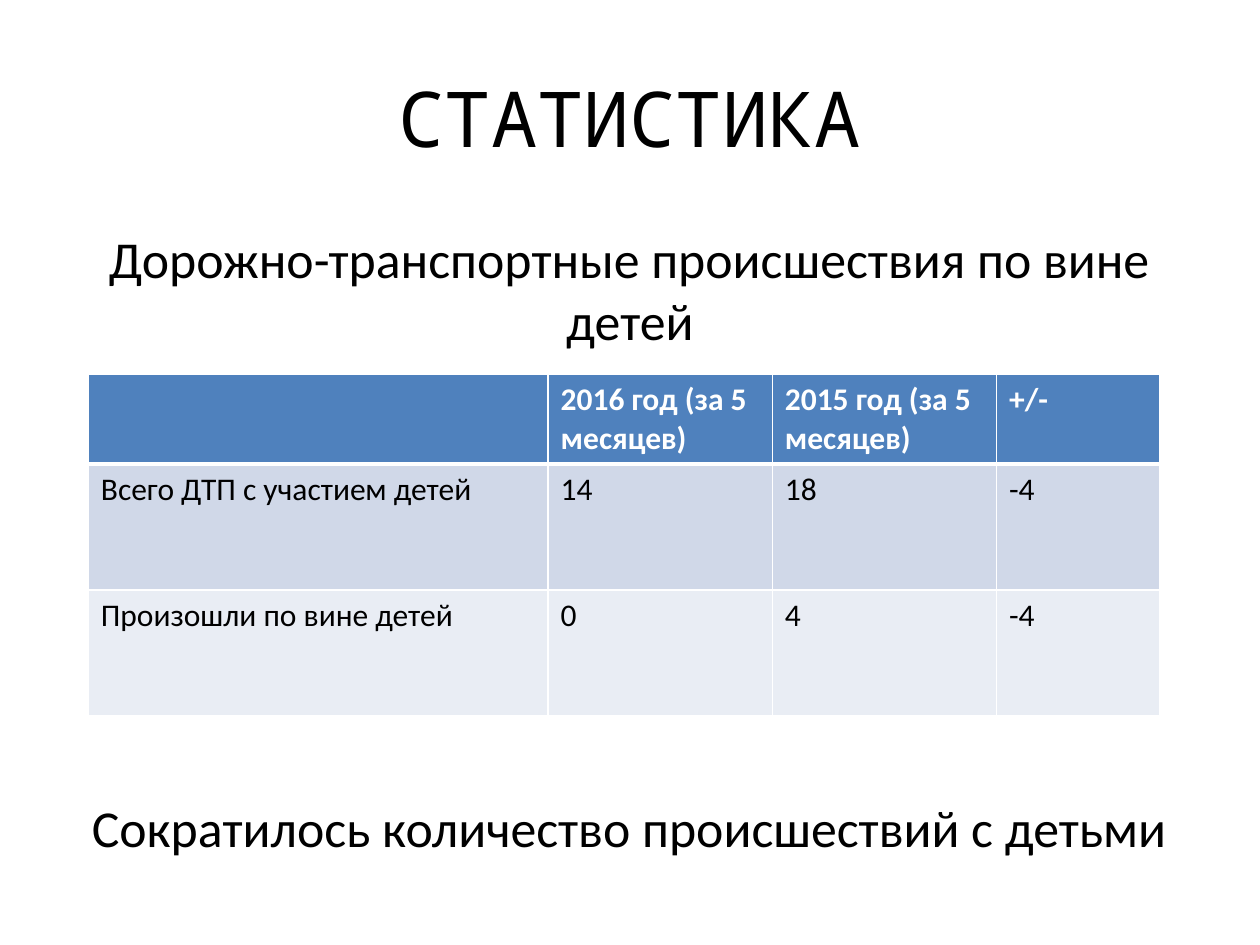
from lxml import etree
from pptx import Presentation
from pptx.dml.color import RGBColor
from pptx.enum.text import MSO_ANCHOR, MSO_AUTO_SIZE, PP_ALIGN
from pptx.oxml.ns import qn
from pptx.util import Cm, Pt

CENTER = PP_ALIGN.CENTER
MIDDLE = MSO_ANCHOR.MIDDLE
NO_AUTOFIT = MSO_AUTO_SIZE.NONE

COLORS = {
    "text": "000000",
    "white": "FFFFFF",
    "header": "4F81BD",
    "odd_row": "D0D8E8",
    "even_row": "E9EDF4",
}
ROW_FILLS = ["header", "odd_row", "even_row"]
ROWS = [
    ["", "2016 год (за 5 месяцев)", "2015 год (за 5 месяцев)", "+/-"],
    ["Всего ДТП с участием детей", "14", "18", "-4"],
    ["Произошли по вине детей", "0", "4", "-4"],
]
COLUMN_WIDTHS = [9.27, 4.52, 4.52, 3.3]
ROW_HEIGHTS = [1.78, 2.54, 2.54]


def place(shape, left, top, width, height):
    shape.left, shape.top = Cm(left), Cm(top)
    shape.width, shape.height = Cm(width), Cm(height)


def add_run(paragraph, text, size, color="text", font="Calibri", bold=False):
    run = paragraph.add_run()
    run.text = text
    run.font.name = font
    run.font.size = Pt(size)
    run.font.bold = bold
    run.font.color.rgb = RGBColor.from_string(COLORS[color])


def fill_title(title):
    place(title, 1.27, 0.76, 22.86, 3.18)
    title.text_frame.auto_size = NO_AUTOFIT
    title.text_frame.vertical_anchor = MIDDLE
    paragraph = title.text_frame.paragraphs[0]
    paragraph.alignment = CENTER
    add_run(paragraph, "СТАТИСТИКА", 44, font="Noto Sans Mono")


def format_body_paragraph(paragraph, text, space_before):
    paragraph.alignment = CENTER
    paragraph.space_before = Pt(space_before)
    properties = paragraph._p.get_or_add_pPr()
    properties.set("marL", "0")
    properties.set("indent", "0")
    etree.SubElement(properties, qn("a:buNone"))
    add_run(paragraph, text, 29.6)


def fill_body(body):
    place(body, 1.27, 4.45, 22.86, 13.41)
    frame = body.text_frame
    frame.auto_size = NO_AUTOFIT
    format_body_paragraph(
        frame.paragraphs[0], "Дорожно-транспортные происшествия по вине детей", 6)
    format_body_paragraph(
        frame.add_paragraph(), "Сократилось количество происшествий с детьми", 254)


def add_borders(cell, bottom_width):
    properties = cell._tc.get_or_add_tcPr()
    widths = {"lnL": 1, "lnR": 1, "lnT": 1, "lnB": bottom_width}
    for side, width in widths.items():
        line = etree.SubElement(properties, qn(f"a:{side}"), w=str(Pt(width)))
        fill = etree.SubElement(line, qn("a:solidFill"))
        etree.SubElement(fill, qn("a:srgbClr"), val=COLORS["white"])


def fill_cell(cell, text, fill, is_header, bottom_width):
    add_borders(cell, bottom_width)
    cell.fill.solid()
    cell.fill.fore_color.rgb = RGBColor.from_string(COLORS[fill])
    if text:
        color = "white" if is_header else "text"
        add_run(cell.text_frame.paragraphs[0], text, 18, color, bold=is_header)


def add_accident_table(slide):
    table = slide.shapes.add_table(
        len(ROWS), len(COLUMN_WIDTHS), Cm(1.78), Cm(7.55),
        Cm(sum(COLUMN_WIDTHS)), Cm(sum(ROW_HEIGHTS))).table
    for column, width in zip(table.columns, COLUMN_WIDTHS):
        column.width = Cm(width)
    for row, height, texts, fill in zip(table.rows, ROW_HEIGHTS, ROWS, ROW_FILLS):
        row.height = Cm(height)
        is_header = fill == "header"
        for cell, text in zip(row.cells, texts):
            fill_cell(cell, text, fill, is_header, 3 if is_header else 1)


def main():
    presentation = Presentation()
    presentation.slide_width = Cm(25.4)
    presentation.slide_height = Cm(19.05)
    slide = presentation.slides.add_slide(presentation.slide_layouts[1])
    fill_title(slide.shapes.title)
    fill_body(slide.placeholders[1])
    add_accident_table(slide)
    presentation.save("out.pptx")


if __name__ == "__main__":
    main()
